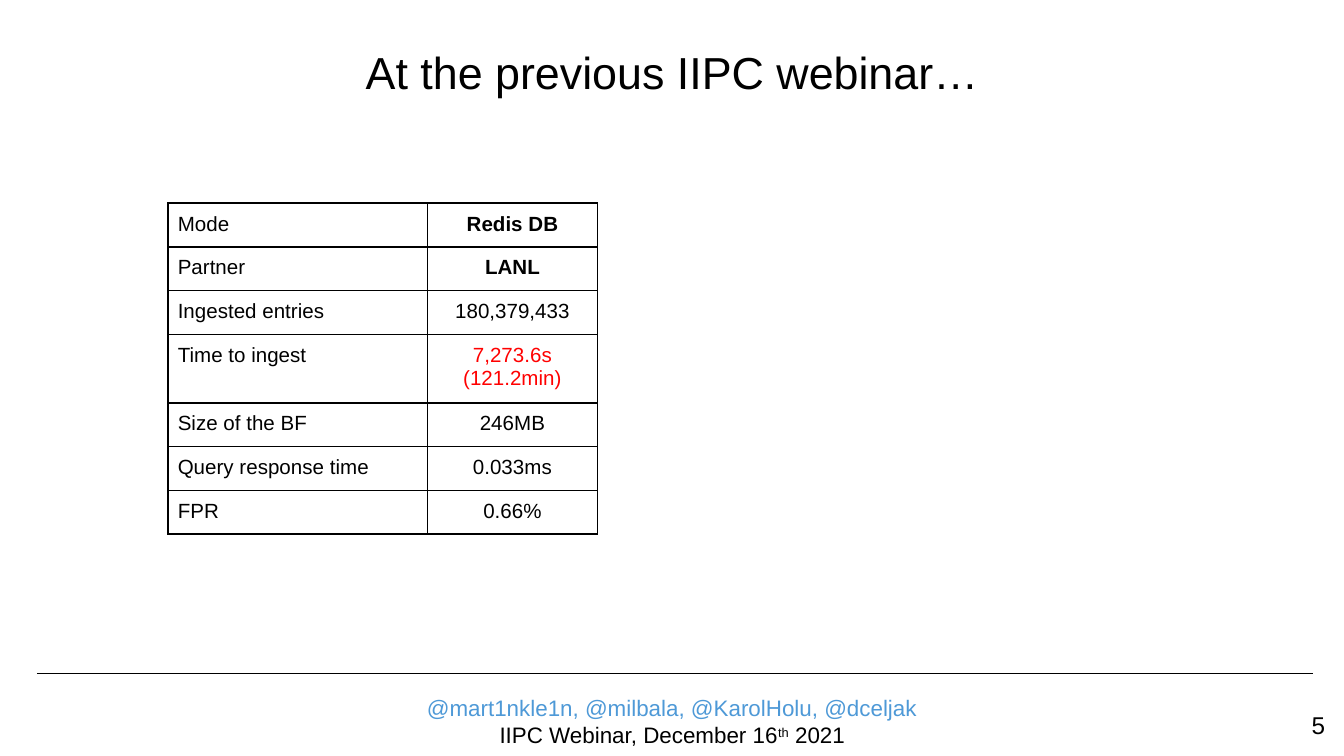
from pptx import Presentation
from pptx.dml.color import RGBColor
from pptx.enum.shapes import MSO_CONNECTOR
from pptx.enum.text import MSO_ANCHOR, PP_ALIGN
from pptx.oxml import parse_xml
from pptx.oxml.ns import nsdecls
from pptx.util import Cm, Pt

LEFT, CENTER, RIGHT = PP_ALIGN.LEFT, PP_ALIGN.CENTER, PP_ALIGN.RIGHT
TOP, MIDDLE = MSO_ANCHOR.TOP, MSO_ANCHOR.MIDDLE
STRAIGHT = MSO_CONNECTOR.STRAIGHT

BLACK = RGBColor(0x00, 0x00, 0x00)
BLUE = RGBColor(0x4E, 0x99, 0xD7)
RED = RGBColor(0xFF, 0x00, 0x00)

TITLE_ONLY = 5
ROW_HEIGHT, TALL_ROW_HEIGHT = 0.78, 1.22
COLUMN_WIDTHS = (4.9, 3.21)
RESULTS = [
    ("Mode", "Redis DB"),
    ("Partner", "LANL"),
    ("Ingested entries", "180,379,433"),
    ("Time to ingest", "7,273.6s (121.2min)"),
    ("Size of the BF", "246MB"),
    ("Query response time", "0.033ms"),
    ("FPR", "0.66%"),
]
BOLD_VALUES = ("Redis DB", "LANL")
TIME_LABEL = "Time to ingest"


class SlideBuilder:
    def __init__(self, slide, font="Arial"):
        self.slide = slide
        self.font = font

    def style(self, para, size, color=BLACK, align=LEFT, bold=False):
        para.alignment = align
        para.font.name = self.font
        para.font.size = Pt(size)
        para.font.bold = bold
        para.font.color.rgb = color

    def set_margins(self, item, across, down):
        item.margin_left = item.margin_right = Cm(across)
        item.margin_top = item.margin_bottom = Cm(down)

    def title(self, text, left, top, width, height):
        box = self.slide.shapes.title
        box.left, box.top = Cm(left), Cm(top)
        box.width, box.height = Cm(width), Cm(height)
        frame = box.text_frame
        frame.text = text
        frame.vertical_anchor = MIDDLE
        self.set_margins(frame, 0.25, 0.08)
        self.style(frame.paragraphs[0], 24, align=CENTER)

    def text(self, lines, left, top, width, height, size, align, inset):
        """Each line is a colour and a list of (text, is_superscript) spans."""
        box = self.slide.shapes.add_textbox(Cm(left), Cm(top), Cm(width), Cm(height))
        frame = box.text_frame
        frame.word_wrap = True
        self.set_margins(frame, 0.25, inset)
        for index, (color, spans) in enumerate(lines):
            para = frame.add_paragraph() if index else frame.paragraphs[0]
            self.style(para, size, color, align)
            for text, is_superscript in spans:
                span = para.add_run()
                span.text = text
                if is_superscript:
                    span._r.get_or_add_rPr().set("baseline", "30000")

    def rule(self, left, right, y):
        line = self.slide.shapes.add_connector(STRAIGHT, Cm(left), Cm(y), Cm(right), Cm(y))
        line.line.color.rgb = BLACK
        line.line.width = Pt(0.75)
        line._element.spPr.append(parse_xml(f"<a:effectLst {nsdecls('a')}/>"))

    def cell(self, cell, text, **style):
        cell.text = text
        cell.vertical_anchor = TOP
        self.set_margins(cell, 0.18, 0.18)
        self.style(cell.text_frame.paragraphs[0], 11, **style)
        properties = cell._tc.get_or_add_tcPr()
        for side in ("lnL", "lnR", "lnT", "lnB"):
            properties.append(parse_xml(
                f'<a:{side} {nsdecls("a")} w="{Pt(1)}"><a:solidFill>'
                f'<a:srgbClr val="{BLACK}"/></a:solidFill></a:{side}>'))
        cell.fill.background()

    def table(self, rows, left, top):
        heights = [TALL_ROW_HEIGHT if label == TIME_LABEL else ROW_HEIGHT
                   for label, _ in rows]
        table = self.slide.shapes.add_table(
            len(rows), len(COLUMN_WIDTHS), Cm(left), Cm(top),
            Cm(sum(COLUMN_WIDTHS)), Cm(sum(heights))).table
        table.first_row = table.horz_banding = False
        for column, width in zip(table.columns, COLUMN_WIDTHS):
            column.width = Cm(width)
        for index, (label, value) in enumerate(rows):
            table.rows[index].height = Cm(heights[index])
            self.cell(table.cell(index, 0), label)
            self.cell(table.cell(index, 1), value, align=CENTER,
                      bold=value in BOLD_VALUES,
                      color=RED if label == TIME_LABEL else BLACK)


def main():
    deck = Presentation()
    deck.slide_width, deck.slide_height = Cm(25.4), Cm(14.29)
    page = SlideBuilder(deck.slides.add_slide(deck.slide_layouts[TITLE_ONLY]))

    # Footer
    page.rule(0.7, 24.82, 12.73)
    page.text([
        (BLUE, [("@mart1nkle1n, @milbala, @KarolHolu, @dceljak", False)]),
        (BLACK, [("IIPC Webinar, December 16", False), ("th", True), (" 2021", False)]),
    ], 5.72, 13, 13.97, 1.27, size=12, align=CENTER, inset=0.13)

    # Title
    page.title("At the previous IIPC webinar…", 1.8, 0.38, 21.8, 1.96)

    # Slide number
    page.text([(BLACK, [("5", False)])], 23.77, 13.18, 1.52, 1.09,
              size=13, align=RIGHT, inset=0.25)

    # Results
    page.table(RESULTS, 3.18, 3.84)

    deck.save("out.pptx")


if __name__ == "__main__":
    main()
